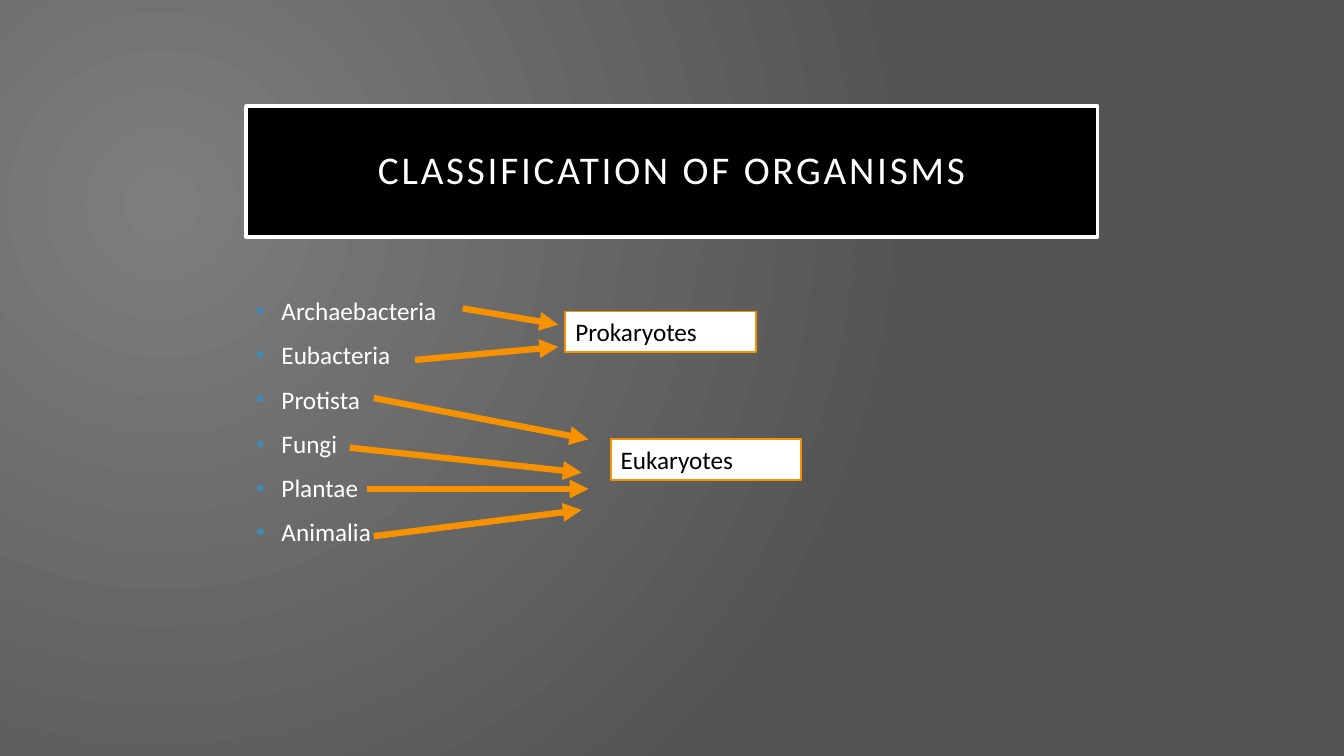
from dataclasses import dataclass

import lxml.etree
import pptx
import pptx.dml.color
import pptx.enum.shapes
import pptx.enum.text
import pptx.oxml.ns
import pptx.util

Cm, Pt = pptx.util.Cm, pptx.util.Pt
ALIGN = pptx.enum.text.PP_ALIGN
ANCHOR = pptx.enum.text.MSO_ANCHOR
qn = pptx.oxml.ns.qn


@dataclass(frozen=True)
class Theme:
    font: str = "Calibri"
    title_size: float = 28
    text_size: float = 18
    white: str = "FFFFFF"
    black: str = "000000"
    accent: str = "F69200"
    bullet: str = "418AB3"
    glow: tuple = ("7D7D7D", "545454")


def rgb(value):
    return pptx.dml.color.RGBColor.from_string(value)


def apply(target, values):
    for name, value in values.items():
        setattr(target, name, value)


def add_xml(parent, tag, **attributes):
    return lxml.etree.SubElement(parent, qn(tag), attributes)


class SlideBuilder:
    def __init__(self, slide, theme):
        self.slide, self.theme = slide, theme

    def place(self, shape, left, top, width, height):
        apply(shape, {"left": Cm(left), "top": Cm(top),
                      "width": Cm(width), "height": Cm(height)})

    def outline(self, shape, color, width):
        shape.line.fill.solid()
        shape.line.color.rgb = rgb(color)
        shape.line.width = Pt(width)

    def paint(self, shape, fill, line, width):
        shape.fill.solid()
        shape.fill.fore_color.rgb = rgb(fill)
        self.outline(shape, line, width)

    def add_words(self, paragraph, words, size, color, **layout):
        apply(paragraph, layout)
        run = paragraph.add_run()
        run.text = words
        apply(run.font, {"name": self.theme.font, "size": Pt(size)})
        run.font.color.rgb = rgb(color)
        return run

    def background(self):
        fill = self.slide.background.fill
        fill.gradient()
        for stop, color, position in zip(fill.gradient_stops, self.theme.glow, (0, 1)):
            stop.color.rgb = rgb(color)
            stop.position = position
        # Radial glow centred in the upper left
        gradient = next(self.slide._element.iter(qn("a:gradFill")))
        gradient.remove(gradient.find(qn("a:lin")))
        circle = add_xml(gradient, "a:path", path="circle")
        add_xml(circle, "a:fillToRect", l="50000", t="55000", r="125000", b="100000")

    def title(self, words, *area):
        heading = self.slide.shapes.title
        self.place(heading, *area)
        self.paint(heading, self.theme.black, self.theme.white, 2.5)
        frame = heading.text_frame
        margins = dict.fromkeys(
            ("margin_left", "margin_top", "margin_right", "margin_bottom"), Cm(0.5))
        apply(frame, {"vertical_anchor": ANCHOR.MIDDLE, "word_wrap": True, **margins})
        run = self.add_words(frame.paragraphs[0], words, self.theme.title_size,
                             self.theme.white, alignment=ALIGN.CENTER, line_spacing=0.9)
        run.font._element.set("spc", "200")

    def bullets(self, items, *area):
        body = self.slide.placeholders[1]
        self.place(body, *area)
        frame = body.text_frame
        apply(frame, {"vertical_anchor": ANCHOR.TOP, "word_wrap": True})
        for index, item in enumerate(items):
            paragraph = frame.add_paragraph() if index else frame.paragraphs[0]
            self.add_words(paragraph, item, self.theme.text_size, self.theme.white,
                           alignment=ALIGN.LEFT, space_before=Pt(10))
            properties = paragraph._p.get_or_add_pPr()
            indent = Cm(0.64)
            properties.set("marL", str(int(indent)))
            properties.set("indent", str(-int(indent)))
            color = add_xml(properties, "a:buClr")
            add_xml(color, "a:srgbClr", val=self.theme.bullet)
            add_xml(properties, "a:buFont", typeface="Arial")
            add_xml(properties, "a:buChar", char="•")

    def arrow(self, *ends):
        arrow = self.slide.shapes.add_connector(
            pptx.enum.shapes.MSO_CONNECTOR.STRAIGHT, *map(Cm, ends))
        self.outline(arrow, self.theme.accent, 4.5)
        properties = arrow._element.spPr
        add_xml(properties.find(qn("a:ln")), "a:tailEnd", type="triangle")
        add_xml(properties, "a:effectLst")

    def label(self, words, left, top):
        box = self.slide.shapes.add_shape(
            pptx.enum.shapes.MSO_SHAPE.RECTANGLE, Cm(left), Cm(top), Cm(4.8), Cm(1.02))
        box.shadow.inherit = False
        self.paint(box, self.theme.white, self.theme.accent, 1.35)
        apply(box.text_frame, {"word_wrap": True, "vertical_anchor": ANCHOR.TOP,
                               "auto_size": pptx.enum.text.MSO_AUTO_SIZE.SHAPE_TO_FIT_TEXT})
        self.add_words(box.text_frame.paragraphs[0], words, self.theme.text_size,
                       self.theme.black, alignment=ALIGN.LEFT)


# Kingdom, with its arrow's start and end
KINGDOMS = {
    "Archaebacteria": (11.66, 7.77, 14.07, 8.18),
    "Eubacteria": (10.46, 9.07, 14.07, 8.74),
    "Protista": (9.42, 10.03, 14.83, 11.07),
    "Fungi": (8.81, 11.28, 14.66, 11.91),
    "Plantae": (9.25, 12.32, 14.83, 12.32),
    "Animalia": (9.42, 13.51, 14.66, 12.85),
}
CELL_TYPES = {"Prokaryotes": (14.25, 7.85), "Eukaryotes": (15.39, 11.07)}


def main():
    deck = pptx.Presentation()
    apply(deck, {"slide_width": Cm(33.87), "slide_height": Cm(19.05)})
    builder = SlideBuilder(deck.slides.add_slide(deck.slide_layouts[1]), Theme())

    # Background, title and list
    builder.background()
    builder.title("CLASSIFICATION OF ORGANISMS", 6.2, 2.67, 21.46, 3.3)
    builder.bullets(KINGDOMS, 6.2, 7.32, 21.46, 8.61)

    # Arrows from kingdoms to cell types
    for ends in KINGDOMS.values():
        builder.arrow(*ends)
    for cell_type, corner in CELL_TYPES.items():
        builder.label(cell_type, *corner)

    deck.save("out.pptx")


if __name__ == "__main__":
    main()
